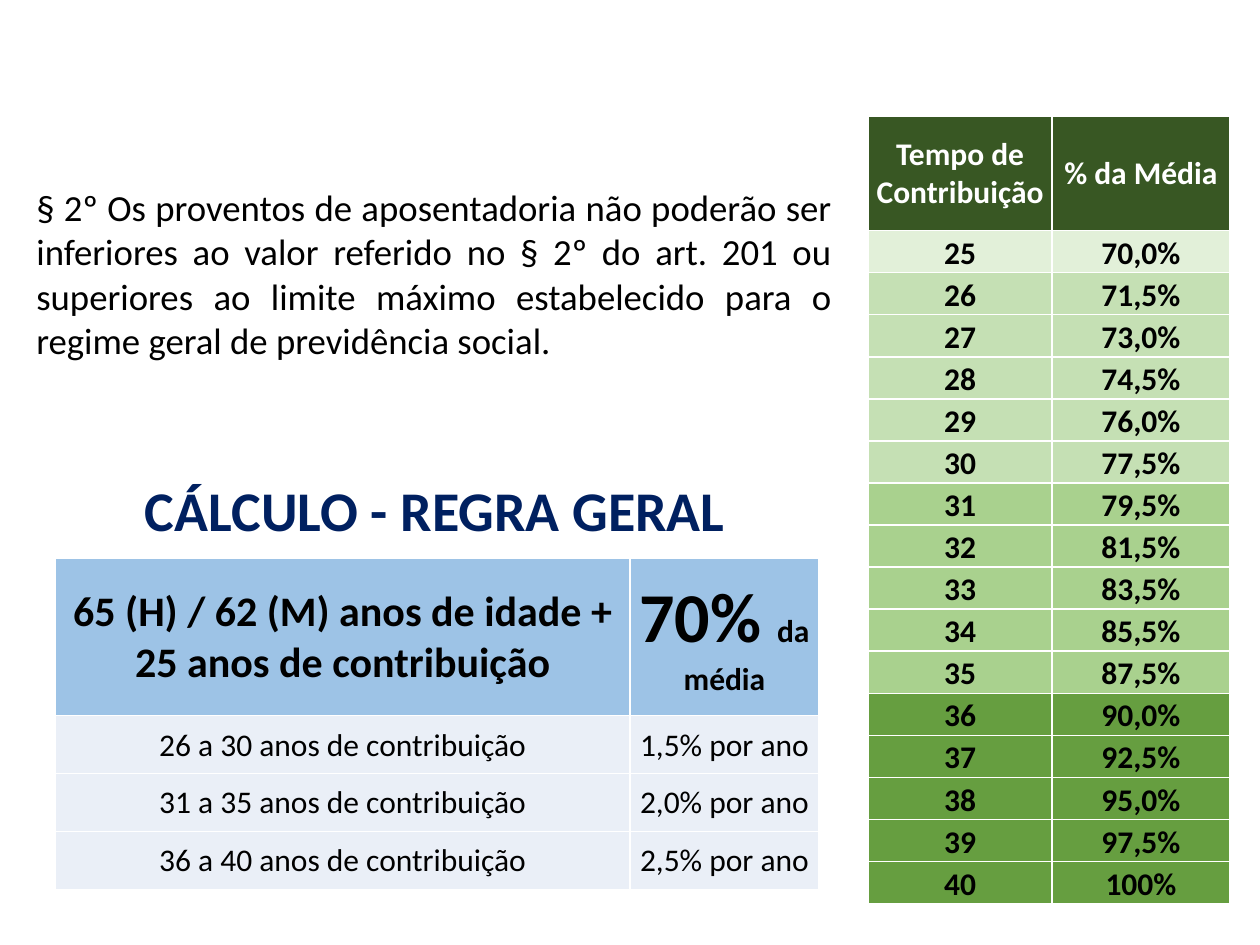
from dataclasses import dataclass

from lxml import etree
from pptx import Presentation
from pptx.dml.color import RGBColor
from pptx.enum.text import MSO_ANCHOR, MSO_AUTO_SIZE, PP_ALIGN
from pptx.oxml.ns import qn
from pptx.util import Inches, Pt

CENTER, JUSTIFY, LEFT = PP_ALIGN.CENTER, PP_ALIGN.JUSTIFY, PP_ALIGN.LEFT
MIDDLE, BOTTOM, TOP = MSO_ANCHOR.MIDDLE, MSO_ANCHOR.BOTTOM, MSO_ANCHOR.TOP
NO_AUTOFIT = MSO_AUTO_SIZE.NONE
TITLE_ONLY = 5


@dataclass(frozen=True)
class Theme:
    font: str = "Calibri"
    black: str = "000000"
    white: str = "FFFFFF"
    navy: str = "002060"
    rule_header: str = "9DC3E6"
    rule_row: str = "EAEFF7"
    scale_header: str = "385723"
    scale_base: str = "E2F0D9"
    title_size: float = 32
    body_size: float = 21
    rule_size: float = 24
    rate_size: float = 40
    cell_size: float = 18


THEME = Theme()


@dataclass(frozen=True)
class Band:
    """Years of contribution that each add the same rate to the average."""
    first: int
    last: int
    rate: float
    color: str


@dataclass(frozen=True)
class Span:
    text: str
    size: float = THEME.cell_size


@dataclass(frozen=True)
class CellStyle:
    fill: str
    color: str = THEME.black
    bold: bool = True
    anchor: MSO_ANCHOR = MIDDLE


@dataclass(frozen=True)
class Row:
    cells: list[list[list[Span]]]  # cells, their paragraphs, their spans
    style: CellStyle


@dataclass(frozen=True)
class Grid:
    left: float
    top: float
    columns: list[float]
    header_height: float
    row_height: float
    rows: list[Row]


BANDS = [
    Band(26, 30, 1.5, "C5E0B4"),
    Band(31, 35, 2.0, "A9D18E"),
    Band(36, 40, 2.5, "669E40"),
]
BASE_YEARS, BASE_PERCENT = 25, 70.0


def percent(value: float) -> str:
    return "100%" if value == 100 else f"{value:.1f}%".replace(".", ",")


def plain_row(texts: list[str], style: CellStyle) -> Row:
    return Row([[[Span(text)]] for text in texts], style)


def rule_rows() -> list[Row]:
    condition = [
        [Span("65 (H) / 62 (M) anos de idade +", THEME.rule_size)],
        [Span("25 anos de contribuição", THEME.rule_size)],
    ]
    share = [[Span("70% ", THEME.rate_size), Span("da média")]]
    rows = [Row([condition, share], CellStyle(THEME.rule_header))]
    style = CellStyle(THEME.rule_row, bold=False)
    for band in BANDS:
        years = f"{band.first} a {band.last} anos de contribuição"
        rows.append(plain_row([years, f"{percent(band.rate)} por ano"], style))
    return rows


def scale_rows() -> list[Row]:
    header = CellStyle(THEME.scale_header, THEME.white)
    base = CellStyle(THEME.scale_base, anchor=BOTTOM)
    rows = [
        plain_row(["Tempo de Contribuição", "% da Média"], header),
        plain_row([str(BASE_YEARS), percent(BASE_PERCENT)], base),
    ]
    total = BASE_PERCENT
    for band in BANDS:
        style = CellStyle(band.color, anchor=BOTTOM)
        for years in range(band.first, band.last + 1):
            total += band.rate
            rows.append(plain_row([str(years), percent(total)], style))
    return rows


def set_font(font, color: str, bold: bool) -> None:
    font.name = THEME.font
    font.bold = bold
    font.color.rgb = RGBColor.from_string(color)


def add_borders(cell) -> None:
    properties = cell._tc.get_or_add_tcPr()
    for side in ("lnL", "lnR", "lnT", "lnB"):
        line = etree.SubElement(properties, qn(f"a:{side}"), w=str(Pt(1)))
        fill = etree.SubElement(line, qn("a:solidFill"))
        etree.SubElement(fill, qn("a:srgbClr"), val=THEME.white)


def fill_cell(cell, paragraphs: list[list[Span]], style: CellStyle) -> None:
    add_borders(cell)
    cell.fill.solid()
    cell.fill.fore_color.rgb = RGBColor.from_string(style.fill)
    cell.vertical_anchor = style.anchor
    cell.margin_left = cell.margin_right = cell.margin_top = Inches(0.01)
    cell.margin_bottom = 0
    frame = cell.text_frame
    for index, spans in enumerate(paragraphs):
        para = frame.add_paragraph() if index else frame.paragraphs[0]
        para.alignment = CENTER
        set_font(para.font, style.color, style.bold)
        para.font.size = Pt(spans[0].size)
        for span in spans:
            run = para.add_run()
            run.text = span.text
            if span.size != spans[0].size:
                run.font.size = Pt(span.size)


def add_grid(page, grid: Grid) -> None:
    heights = [grid.header_height] + [grid.row_height] * (len(grid.rows) - 1)
    table = page.shapes.add_table(
        len(heights), len(grid.columns), Inches(grid.left), Inches(grid.top),
        Inches(sum(grid.columns)), Inches(sum(heights))).table
    table.first_row = table.horz_banding = False
    for column, width in zip(table.columns, grid.columns):
        column.width = Inches(width)
    for table_row, height, row in zip(table.rows, heights, grid.rows):
        table_row.height = Inches(height)
        for cell, paragraphs in zip(table_row.cells, row.cells):
            fill_cell(cell, paragraphs, row.style)


def write_text(box, text: str, size: float, color: str, bold: bool,
               alignment: PP_ALIGN, wrap: bool) -> None:
    frame = box.text_frame
    frame.word_wrap = wrap
    frame.auto_size = NO_AUTOFIT
    frame.vertical_anchor = TOP
    para = frame.paragraphs[0]
    para.text = text
    para.alignment = alignment
    set_font(para.font, color, bold)
    para.font.size = Pt(size)


def main() -> None:
    deck = Presentation()
    deck.slide_width, deck.slide_height = Inches(10), Inches(7.5)
    page = deck.slides.add_slide(deck.slide_layouts[TITLE_ONLY])

    add_grid(page, Grid(0.44, 4.43, [4.56, 1.5], 1.25, 0.46, rule_rows()))
    add_grid(page, Grid(6.89, 0.92, [1.46, 1.41], 0.91, 0.334, scale_rows()))

    title = page.shapes.title
    title.left, title.top = Inches(1.05), Inches(3.72)
    title.width, title.height = Inches(4.85), Inches(0.64)
    write_text(title, "CÁLCULO - REGRA GERAL", THEME.title_size, THEME.navy,
               True, LEFT, False)

    law = page.shapes.add_textbox(
        Inches(0.19), Inches(1.42), Inches(6.51), Inches(1.51))
    write_text(law, "§ 2º Os proventos de aposentadoria não poderão ser "
               "inferiores ao valor referido no § 2º do art. 201 ou "
               "superiores ao limite máximo estabelecido para o regime geral "
               "de previdência social.", THEME.body_size, THEME.black,
               False, JUSTIFY, True)

    deck.save("out.pptx")


if __name__ == "__main__":
    main()
